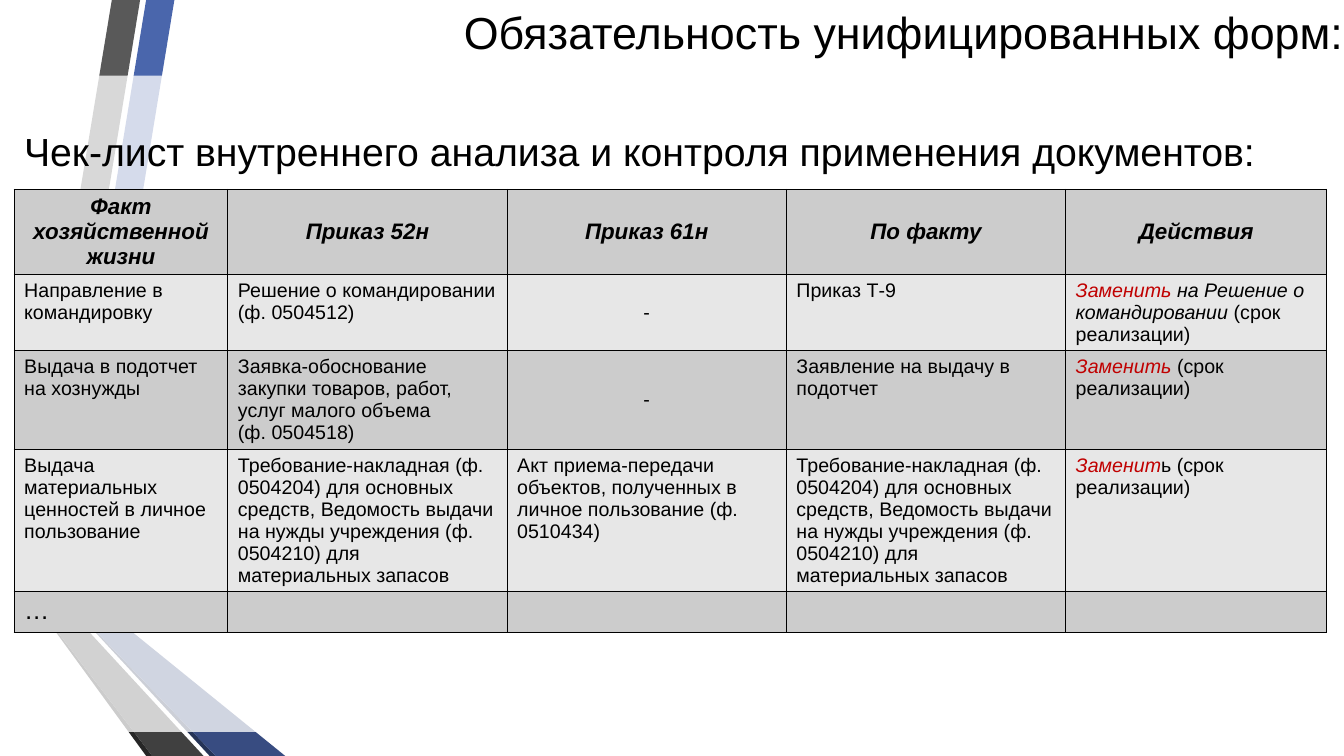
from dataclasses import dataclass

from lxml import etree
from pptx import Presentation
from pptx import util as u
from pptx.dml.color import RGBColor
from pptx.enum import shapes, text
from pptx.oxml import ns

PX = 9144
SLIDE = (1333, 750)


@dataclass(frozen=True)
class Theme:
    font: str = "Arial"
    ink: str = "000000"
    paper: str = "FFFFFF"
    accent: str = "C00000"
    bands: tuple = ("CCCCCC", "E7E7E7")
    title: int = 32
    subtitle: int = 28
    header: int = 16
    body: int = 14
    ellipsis: int = 18
    border: int = 1
    panel_opacity: int = 77


THEME = Theme()

TITLE = "Обязательность унифицированных форм:"
SUBTITLE = "Чек-лист внутреннего анализа и контроля применения документов:"
HEADERS = ("Факт хозяйственной жизни", "Приказ 52н", "Приказ 61н", "По факту", "Действия")
REQUISITION = (
    "Требование-накладная (ф. 0504204) для основных средств, Ведомость выдачи "
    "на нужды учреждения (ф. 0504210) для материальных запасов"
)
DEADLINE = "(срок реализации)"
RED, ITALIC, PLAIN = (THEME.accent, True), (THEME.ink, True), (THEME.ink, False)
ROWS = (
    HEADERS,
    (
        "Направление в командировку",
        "Решение о командировании (ф. 0504512)",
        "-",
        "Приказ Т-9",
        (("Заменить ", RED), ("на Решение о командировании ", ITALIC), (DEADLINE, PLAIN)),
    ),
    (
        "Выдача в подотчет на хознужды",
        "Заявка-обоснование закупки товаров, работ, услуг малого объема\n(ф. 0504518)",
        "-",
        "Заявление на выдачу в подотчет",
        (("Заменить ", RED), (DEADLINE, PLAIN)),
    ),
    (
        "Выдача материальных ценностей в личное пользование",
        REQUISITION,
        "Акт приема-передачи объектов, полученных в личное пользование (ф. 0510434)",
        REQUISITION,
        (("Заменит", RED), ("ь " + DEADLINE, PLAIN)),
    ),
    ("…", "", "", "", ""),
)

TITLE_BOX = (131, 3, 1202, 56)
PANEL_BOX = (14, 75, 1302, 651)
PANEL_TOP_INSET = 51
TABLE_ORIGIN = (14, 188)
COLUMN_WIDTHS = (212, 277, 277, 277, 259)
ROW_HEIGHTS = (84, 75, 98, 141, 41)
RIBBONS = (
    ("4A66AC", ((50, 578), (77, 583), (173, 0), (145, 0))),
    ("595959", ((139, 0), (111, 0), (16, 573), (44, 577))),
    ("262626", ((16, 573), (145, 750), (151, 750))),
    ("253356", ((50, 579), (208, 750), (214, 750))),
    ("384C81", ((50, 579), (214, 750), (283, 750), (77, 583), (50, 578))),
    ("404040", ((202, 750), (48, 583), (43, 578), (44, 577), (16, 573), (151, 750))),
)


def emu(lengths):
    return [length * PX for length in lengths]


def style(font, size, color=THEME.ink, bold=False, italic=False):
    font.name, font.size, font.bold, font.italic = THEME.font, u.Pt(size), bold, italic
    font.color.rgb = RGBColor.from_string(color)


def paint(shape, color):
    shape.shadow.inherit = False
    shape.fill.solid()
    shape.fill.fore_color.rgb = RGBColor.from_string(color)
    shape.line.fill.background()


def add_ribbons(slide):
    for color, points in RIBBONS:
        builder = slide.shapes.build_freeform(*points[0], scale=PX)
        builder.add_line_segments(points[1:], close=True)
        paint(builder.convert_to_shape(), color)


def format_title(slide):
    title = slide.shapes.title
    title.left, title.top, title.width, title.height = emu(TITLE_BOX)
    frame = title.text_frame
    frame.text = TITLE
    frame.word_wrap = True
    frame.auto_size = text.MSO_AUTO_SIZE.NONE
    frame.vertical_anchor = text.MSO_ANCHOR.MIDDLE
    frame.margin_left = frame.margin_right = frame.margin_top = frame.margin_bottom = 0
    paragraph = frame.paragraphs[0]
    paragraph.alignment = text.PP_ALIGN.RIGHT
    style(paragraph.font, THEME.title)


def add_panel(slide):
    panel = slide.shapes.add_shape(shapes.MSO_SHAPE.RECTANGLE, *emu(PANEL_BOX))
    paint(panel, THEME.paper)
    color = panel.fill._xPr.find(".//" + ns.qn("a:srgbClr"))
    etree.SubElement(color, ns.qn("a:alpha"), val=str(THEME.panel_opacity * 1000))
    frame = panel.text_frame
    frame.text = SUBTITLE
    frame.word_wrap = True
    frame.vertical_anchor = text.MSO_ANCHOR.TOP
    frame.margin_top = PANEL_TOP_INSET * PX
    paragraph = frame.paragraphs[0]
    paragraph.alignment = text.PP_ALIGN.LEFT
    style(paragraph.font, THEME.subtitle)


def add_borders(cell):
    properties = cell._tc.get_or_add_tcPr()
    for side in ("lnL", "lnR", "lnT", "lnB"):
        line = etree.SubElement(properties, ns.qn("a:" + side), w=str(u.Pt(THEME.border)))
        fill = etree.SubElement(line, ns.qn("a:solidFill"))
        etree.SubElement(fill, ns.qn("a:srgbClr"), val=THEME.ink)


def fill_cell(cell, content, row):
    add_borders(cell)
    cell.fill.solid()
    cell.fill.fore_color.rgb = RGBColor.from_string(THEME.bands[row % 2])
    header = row == 0
    centred = header or content == "-"
    size = THEME.header if header else THEME.ellipsis if content == "…" else THEME.body
    cell.vertical_anchor = text.MSO_ANCHOR.MIDDLE if centred else text.MSO_ANCHOR.TOP
    if isinstance(content, str):
        cell.text_frame.text = content
    else:
        for words, (color, italic) in content:
            run = cell.text_frame.paragraphs[0].add_run()
            run.text = words
            style(run.font, size, color, italic=italic)
    for paragraph in cell.text_frame.paragraphs:
        paragraph.alignment = text.PP_ALIGN.CENTER if centred else text.PP_ALIGN.LEFT
        style(paragraph.font, size, bold=header, italic=header)


def add_checklist(slide):
    size = sum(COLUMN_WIDTHS), sum(ROW_HEIGHTS)
    frame = slide.shapes.add_table(len(ROWS), len(HEADERS), *emu(TABLE_ORIGIN + size))
    table = frame.table
    table.first_row = table.horz_banding = False
    for column, width in zip(table.columns, COLUMN_WIDTHS):
        column.width = width * PX
    for index, (row, height) in enumerate(zip(table.rows, ROW_HEIGHTS)):
        row.height = height * PX
        for cell, content in zip(row.cells, ROWS[index]):
            fill_cell(cell, content, index)


def main():
    presentation = Presentation()
    presentation.slide_width, presentation.slide_height = emu(SLIDE)
    slide = presentation.slides.add_slide(presentation.slide_layouts[5])
    add_ribbons(slide)
    format_title(slide)
    add_panel(slide)
    add_checklist(slide)
    presentation.save("out.pptx")


if __name__ == "__main__":
    main()
